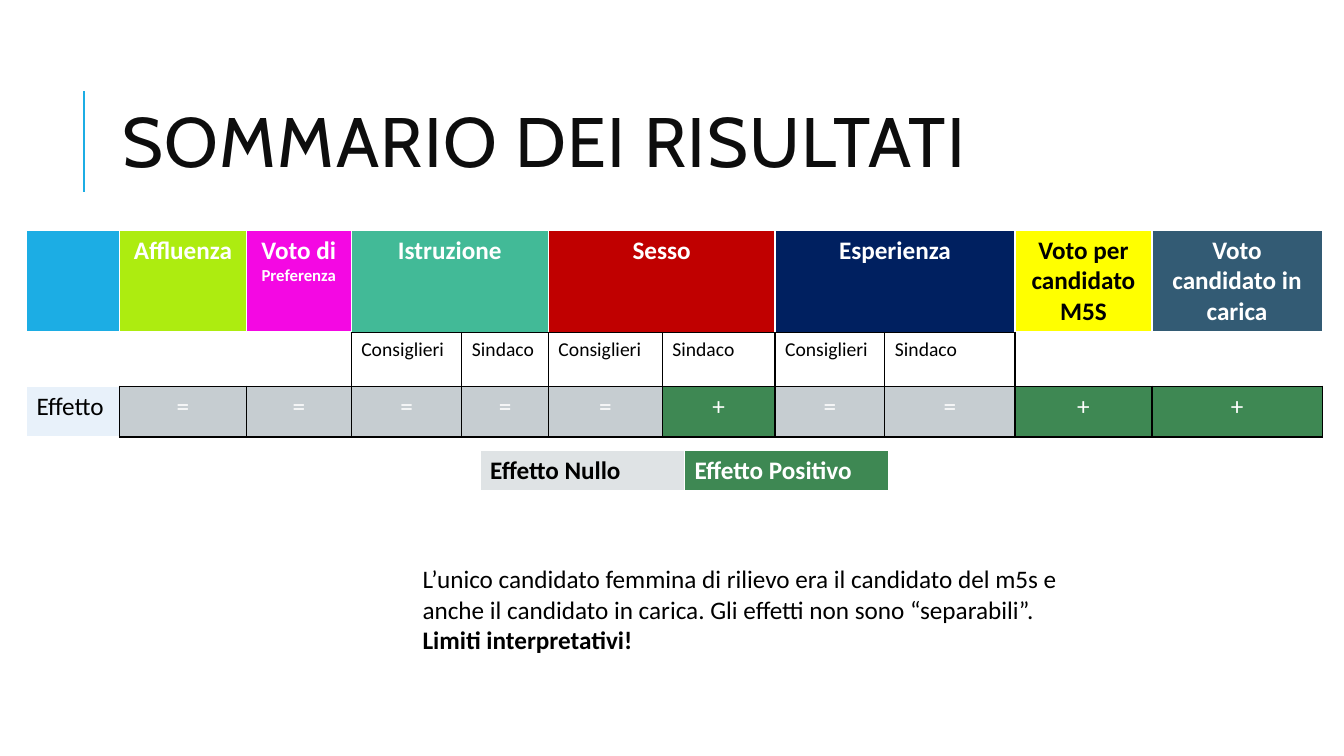
import pptx
import pptx.dml.color
import pptx.enum.shapes
import pptx.enum.text
import pptx.oxml
import pptx.oxml.ns
import pptx.util
from lxml import etree

Cm = pptx.util.Cm
Pt = pptx.util.Pt
RGBColor = pptx.dml.color.RGBColor
ALIGN = pptx.enum.text.PP_ALIGN
ANCHOR = pptx.enum.text.MSO_ANCHOR

BLACK = RGBColor(0x00, 0x00, 0x00)
WHITE = RGBColor(0xFF, 0xFF, 0xFF)
INK = RGBColor(0x0D, 0x0D, 0x0D)
SKY = RGBColor(0x1C, 0xAD, 0xE4)
LIME = RGBColor(0xAD, 0xEC, 0x10)
MAGENTA = RGBColor(0xF4, 0x08, 0xE3)
TEAL = RGBColor(0x42, 0xBA, 0x97)
RED = RGBColor(0xC0, 0x00, 0x00)
NAVY = RGBColor(0x00, 0x20, 0x60)
YELLOW = RGBColor(0xFF, 0xFF, 0x00)
SLATE = RGBColor(0x33, 0x5B, 0x74)
PALE_BLUE = RGBColor(0xE8, 0xF1, 0xFA)
GREY = RGBColor(0xC6, 0xCD, 0xD1)
LIGHT_GREY = RGBColor(0xDF, 0xE3, 0xE5)
GREEN = RGBColor(0x3E, 0x88, 0x53)

COLUMN_WIDTHS = [2.34, 3.2, 2.64, 2.79, 2.18, 2.87, 2.84, 2.77, 3.28, 3.45, 4.29]
ROW_HEIGHTS = [2.57, 1.35, 1.28]
# First column, columns spanned, runs of (text, size), fill, text colour
HEADINGS = [
    (0, 1, [], SKY, WHITE),
    (1, 1, [("Affluenza", 18)], LIME, WHITE),
    (2, 1, [("Voto di ", 18), ("Preferenza", 12)], MAGENTA, WHITE),
    (3, 2, [("Istruzione", 18)], TEAL, WHITE),
    (5, 2, [("Sesso", 18)], RED, WHITE),
    (7, 2, [("Esperienza", 18)], NAVY, WHITE),
    (9, 1, [("Voto per candidato M5S", 18)], YELLOW, BLACK),
    (10, 1, [("Voto candidato in carica", 18)], SLATE, WHITE),
]
ROLE_COLUMNS = range(3, 9)
EFFECTS = "=====+==++"
EFFECT_FILLS = {"=": GREY, "+": GREEN}
LEGEND = [("Effetto Nullo", LIGHT_GREY, BLACK), ("Effetto Positivo", GREEN, WHITE)]


def add_span(para, text, color, size=18, bold=False, name="Calibri"):
    span = para.add_run()
    span.text = text
    span.font.color.rgb = color
    for attribute, value in {"size": Pt(size), "bold": bold, "name": name}.items():
        setattr(span.font, attribute, value)
    return span


def fill_cell(cell, fill, spans=(), color=BLACK, align=ALIGN.LEFT, bold=False):
    cell.fill.solid()
    cell.fill.fore_color.rgb = fill
    para = cell.text_frame.paragraphs[0]
    para.alignment = align
    for text, size in spans:
        add_span(para, text, color, size, bold)


def set_borders(cell, borders):
    """Draw cell borders from a dict of side letter to (colour, points)."""
    properties = cell._tc.get_or_add_tcPr()
    for position, side in enumerate("LRTB"):
        color, width = borders[side]
        properties.insert(position, pptx.oxml.parse_xml(
            f'<a:ln{side} {pptx.oxml.ns.nsdecls("a")} w="{Pt(width)}">'
            f'<a:solidFill><a:srgbClr val="{color}"/></a:solidFill></a:ln{side}>'))


def add_plain_table(page, left, top, widths, heights):
    table = page.shapes.add_table(len(heights), len(widths), Cm(left), Cm(top),
                                  Cm(sum(widths)), Cm(sum(heights))).table
    table.first_row = table.horz_banding = False
    for column, width in zip(table.columns, widths):
        column.width = Cm(width)
    for row, height in zip(table.rows, heights):
        row.height = Cm(height)
    return table


def add_title(page, left, top, width, height):
    title = page.shapes.title
    box = {"left": left, "top": top, "width": width, "height": height}
    for attribute, value in box.items():
        setattr(title, attribute, Cm(value))
    frame = title.text_frame
    frame.word_wrap = True
    frame.vertical_anchor = ANCHOR.MIDDLE
    para = frame.paragraphs[0]
    para.alignment = ALIGN.LEFT
    para.line_spacing = 0.8
    span = add_span(para, "SOMMARIO DEI RISULTATI", INK, 50, name="Cabin")
    span.font._element.set("spc", "100")

    rule_left = Cm(left - 0.73)
    rule = page.shapes.add_connector(pptx.enum.shapes.MSO_CONNECTOR.STRAIGHT,
                                     rule_left, Cm(top + 3.2), rule_left, Cm(top + 0.66))
    rule.line.color.rgb = SKY
    rule.line.width = Pt(1.5)
    etree.SubElement(rule._element.spPr, pptx.oxml.ns.qn("a:effectLst"))


def is_framed(row, column):
    """Tell whether a cell has a black frame: the roles and the effects."""
    return (row == 1 and column in ROLE_COLUMNS) or (row == 2 and column > 0)


def results_borders(row, column):
    neighbours = {"L": (row, column - 1), "R": (row, column + 1),
                  "T": (row - 1, column), "B": (row + 1, column)}
    borders = {}
    for side, neighbour in neighbours.items():
        if is_framed(row, column) or is_framed(*neighbour):
            borders[side] = (BLACK, 1)
        else:
            borders[side] = (WHITE, 3 if row == 0 and side == "B" else 1)
    return borders


def add_results_table(page, left, top):
    table = add_plain_table(page, left, top, COLUMN_WIDTHS, ROW_HEIGHTS)
    for row in range(len(ROW_HEIGHTS)):
        for column in range(len(COLUMN_WIDTHS)):
            set_borders(table.cell(row, column), results_borders(row, column))

    for first, count, spans, fill, color in HEADINGS:
        cell = table.cell(0, first)
        if count > 1:
            cell.merge(table.cell(0, first + count - 1))
        fill_cell(cell, fill, spans, color, ALIGN.CENTER, True)

    for column in range(len(COLUMN_WIDTHS)):
        role = "Consiglieri" if column % 2 else "Sindaco"
        spans = [(role, 14)] if column in ROLE_COLUMNS else []
        fill_cell(table.cell(1, column), WHITE, spans)

    fill_cell(table.cell(2, 0), PALE_BLUE, [("Effetto", 18)])
    for column, sign in enumerate(EFFECTS, start=1):
        fill_cell(table.cell(2, column), EFFECT_FILLS[sign], [(sign, 18)],
                  WHITE, ALIGN.CENTER)


def add_legend(page, left, top, width, height):
    table = add_plain_table(page, left, top, [width / len(LEGEND)] * len(LEGEND), [height])
    borders = {"L": (WHITE, 1), "R": (WHITE, 1), "T": (WHITE, 1), "B": (WHITE, 3)}
    for column, (label, fill, color) in enumerate(LEGEND):
        cell = table.cell(0, column)
        set_borders(cell, borders)
        fill_cell(cell, fill, [(label, 18)], color, bold=True)


def add_comment(page, left, top, width, height):
    frame = page.shapes.add_textbox(Cm(left), Cm(top), Cm(width), Cm(height)).text_frame
    frame.word_wrap = True
    frame.auto_size = pptx.enum.text.MSO_AUTO_SIZE.SHAPE_TO_FIT_TEXT
    add_span(frame.paragraphs[0], "L’unico candidato femmina di rilievo era il candidato "
             "del m5s e anche il candidato in carica. Gli effetti non sono “separabili”.", BLACK)
    add_span(frame.add_paragraph(), "Limiti interpretativi!", BLACK, bold=True)


def main():
    deck = pptx.Presentation()
    deck.slide_width, deck.slide_height = Cm(33.87), Cm(19.05)
    page = deck.slides.add_slide(deck.slide_layouts[5])
    add_title(page, 2.84, 1.63, 27, 4.17)
    add_results_table(page, 0.67, 5.8)
    add_legend(page, 12.1, 11.36, 10.3, 1.03)
    add_comment(page, 10.4, 14.08, 16.95, 2.57)
    deck.save("out.pptx")


if __name__ == "__main__":
    main()
